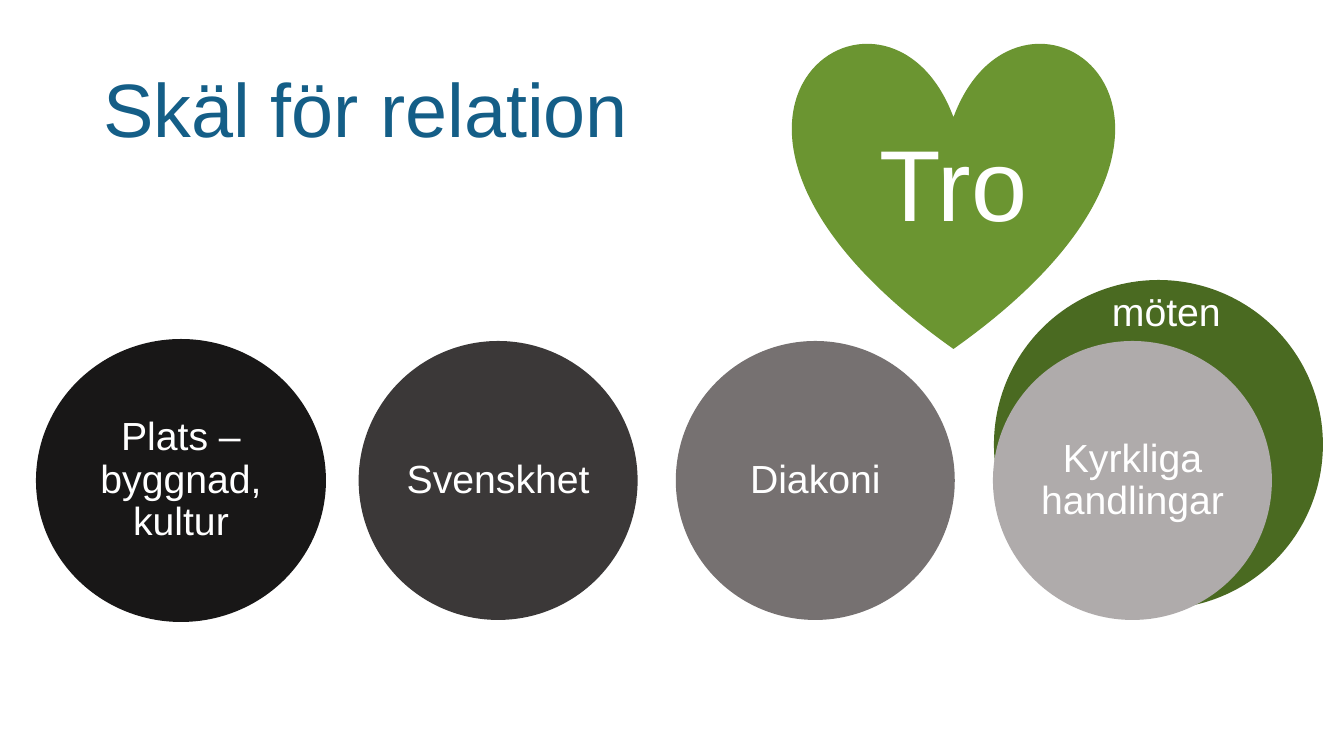
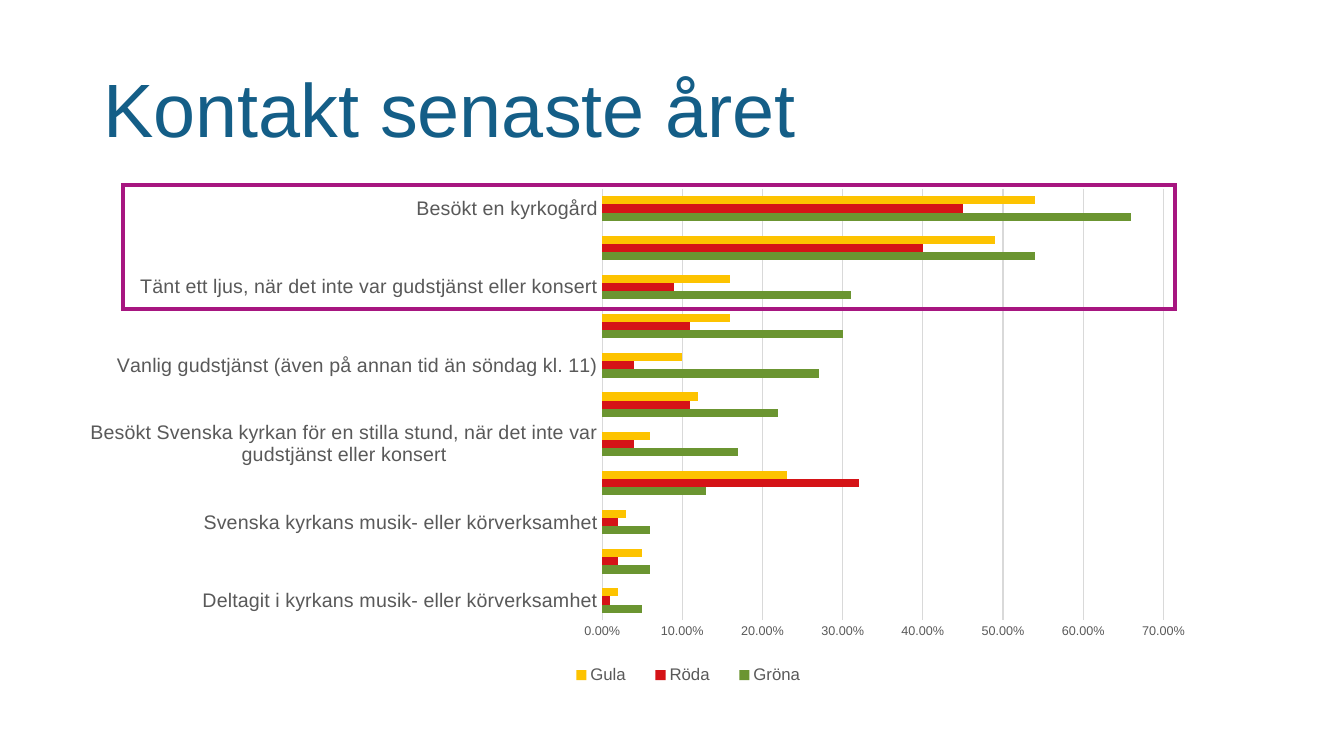
import pptx
import pptx.util
import pptx.chart.data
import pptx.dml.color
import pptx.enum.chart
import pptx.enum.shapes
import pptx.enum.text
import pptx.oxml.ns
import lxml.etree
from dataclasses import dataclass

SHAPE = pptx.enum.shapes.MSO_SHAPE
ALIGN = pptx.enum.text.PP_ALIGN
ANCHOR = pptx.enum.text.MSO_ANCHOR
SLIDE_W, SLIDE_H = 1344, 756
EMU_PER_PX = 12192000 / SLIDE_W


@dataclass(frozen=True)
class Theme:
    font: str = "Arial"
    title: str = "145E87"
    white: str = "FFFFFF"
    axis_text: str = "595959"
    grid: str = "D9D9D9"
    green: str = "6B9531"
    dark_green: str = "4A6A21"
    red: str = "D51317"
    yellow: str = "FDC300"
    highlight: str = "A71680"
    circles: tuple = ("181717", "3B3838", "767171", "AFABAB")
    title_size: int = 54
    heart_size: int = 72
    label_size: int = 28
    category_size: int = 14
    legend_size: int = 12
    tick_size: int = 9


THEME = Theme()


def px(length):
    return pptx.util.Emu(round(length * EMU_PER_PX))


def place(box):
    return [px(length) for length in box]


def color(code):
    return pptx.dml.color.RGBColor.from_string(code)


def style_font(font, size, code):
    font.name = THEME.font
    font.size = pptx.util.Pt(size)
    font.color.rgb = color(code)


def write(frame, text, size, code, align=ALIGN.CENTER, anchor=ANCHOR.MIDDLE, spacing=1.0):
    frame.word_wrap = True
    frame.vertical_anchor = anchor
    para = frame.paragraphs[0]
    para.alignment = align
    para.line_spacing = spacing
    span = para.add_run()
    span.text = text
    style_font(span.font, size, code)


def add_filled(page, kind, box, fill):
    shape = page.shapes.add_shape(kind, *place(box))
    shape.shadow.inherit = False
    shape.fill.solid()
    shape.fill.fore_color.rgb = color(fill)
    shape.line.fill.background()
    return shape


def add_page(deck, title):
    page = deck.slides.add_slide(deck.slide_layouts[5])
    holder = page.shapes.title
    holder.left, holder.top, holder.width, holder.height = place((93, 40, 1159, 146))
    write(holder.text_frame, title, THEME.title_size, THEME.title, ALIGN.LEFT, spacing=0.9)
    return page


def add_circle_row(page, box, labels):
    """Evenly spaced circles; the first is slightly larger."""
    left, top, width, height = box
    small = 279
    first_w, first_h = 290, height
    first_center = left + first_w / 2
    pitch = (left + width - small / 2 - first_center) / (len(labels) - 1)
    for index, (label, fill) in enumerate(zip(labels, THEME.circles)):
        wide, high = (first_w, first_h) if index == 0 else (small, small)
        center = first_center + index * pitch
        circle = add_filled(page, SHAPE.OVAL,
                            (center - wide / 2, top + (height - high) / 2, wide, high), fill)
        frame = circle.text_frame
        frame.margin_left = frame.margin_right = px(4)
        frame.margin_top = frame.margin_bottom = px(4)
        write(frame, label, THEME.label_size, THEME.white, spacing=0.9)


def add_heart(page, box, text):
    heart = add_filled(page, SHAPE.HEART, box, THEME.green)
    write(heart.text_frame, text, THEME.heart_size, THEME.white)


def add_meeting_label(page, box, text):
    label = page.shapes.add_textbox(*place(box))
    write(label.text_frame, text, THEME.label_size, THEME.white, ALIGN.LEFT, ANCHOR.TOP)


def set_layout(owner, position, box, inner=False):
    """Fix a chart part at fractions of the chart."""
    qn = pptx.oxml.ns.qn
    for old in owner.findall(qn("c:layout")):
        owner.remove(old)
    layout = owner.makeelement(qn("c:layout"))
    manual = lxml.etree.SubElement(layout, qn("c:manualLayout"))
    settings = [("layoutTarget", "inner")] if inner else []
    settings += [("xMode", "edge"), ("yMode", "edge"), *zip("xywh", box)]
    for name, value in settings:
        lxml.etree.SubElement(manual, qn("c:" + name)).set("val", str(value))
    owner.insert(position, layout)


def style_axes(chart):
    tick_none = pptx.enum.chart.XL_TICK_MARK.NONE
    categories, values = chart.category_axis, chart.value_axis
    for axis, size in ((categories, THEME.category_size), (values, THEME.tick_size)):
        axis.major_tick_mark = axis.minor_tick_mark = tick_none
        style_font(axis.tick_labels.font, size, THEME.axis_text)
    values.minimum_scale, values.maximum_scale, values.major_unit = 0, 0.7, 0.1
    values.tick_labels.number_format = "0.00%"
    values.tick_labels.number_format_is_linked = False
    values.has_major_gridlines = True
    values.format.line.fill.background()
    for line in (categories.format.line, values.major_gridlines.format.line):
        line.color.rgb = color(THEME.grid)
        line.width = pptx.util.Pt(0.75)


def add_contact_chart(page, box, categories, series):
    data = pptx.chart.data.CategoryChartData(number_format="0.00%")
    data.categories = categories
    for name, _, values in series:
        data.add_series(name, values)
    chart = page.shapes.add_chart(pptx.enum.chart.XL_CHART_TYPE.BAR_CLUSTERED,
                                  *place(box), data).chart
    chart.has_title = False
    style_font(chart.font, THEME.legend_size, THEME.axis_text)
    plot = chart.plots[0]
    plot.gap_width, plot.overlap, plot.vary_by_categories = 182, 0, False
    for bars, (_, fill, _) in zip(plot.series, series):
        bars.format.fill.solid()
        bars.format.fill.fore_color.rgb = color(fill)
        bars.invert_if_negative = False
    style_axes(chart)
    chart.has_legend = True
    legend = chart.legend
    legend.position = pptx.enum.chart.XL_LEGEND_POSITION.BOTTOM
    legend.include_in_layout = False
    style_font(legend.font, THEME.legend_size, THEME.axis_text)
    set_layout(plot._element.getparent(), 0, (0.464, 0.042, 0.495, 0.823), inner=True)
    set_layout(legend._element, 1, (0.42, 0.94, 0.24, 0.06))


def add_highlight(page, box):
    frame = page.shapes.add_shape(SHAPE.RECTANGLE, *place(box))
    frame.shadow.inherit = False
    frame.fill.background()
    frame.line.color.rgb = color(THEME.highlight)
    frame.line.width = pptx.util.Pt(2.25)
    # Square corners
    outline = frame._element.spPr.find(pptx.oxml.ns.qn("a:ln"))
    lxml.etree.SubElement(outline, pptx.oxml.ns.qn("a:miter")).set("lim", "800000")


def build_reasons(deck):
    page = add_page(deck, "Skäl för relation")
    add_filled(page, SHAPE.OVAL, (994, 280, 329, 329), THEME.dark_green)
    add_circle_row(page, (36, 339, 1236, 283),
                   ("Plats – byggnad, kultur", "Svenskhet", "Diakoni", "Kyrkliga handlingar"))
    add_heart(page, (793, 40, 321, 309), "Tro")
    add_meeting_label(page, (1102, 282, 223, 57), "möten")


def build_contacts(deck):
    page = add_page(deck, "Kontakt senaste året")
    # Every second group of bars is labelled, from the bottom up
    labels = (
        "Deltagit i kyrkans musik- eller körverksamhet",
        "Svenska kyrkans musik- eller körverksamhet",
        "Besökt Svenska kyrkan för en stilla stund, när det inte var gudstjänst eller konsert",
        "Vanlig gudstjänst (även på annan tid än söndag kl. 11)",
        "Tänt ett ljus, när det inte var gudstjänst eller konsert",
        "Besökt en kyrkogård",
    )
    categories = [""] * (2 * len(labels) - 1)
    categories[::2] = labels
    series = (
        ("Gröna", THEME.green,
         (0.05, 0.06, 0.06, 0.13, 0.17, 0.22, 0.27, 0.3, 0.31, 0.54, 0.66)),
        ("Röda", THEME.red,
         (0.01, 0.02, 0.02, 0.32, 0.04, 0.11, 0.04, 0.11, 0.09, 0.4, 0.45)),
        ("Gula", THEME.yellow,
         (0.02, 0.05, 0.03, 0.23, 0.06, 0.12, 0.1, 0.16, 0.16, 0.49, 0.54)),
    )
    add_contact_chart(page, (76, 167, 1134, 524), categories, series)
    add_highlight(page, (123, 185, 1052, 124))


def main():
    deck = pptx.Presentation()
    deck.slide_width, deck.slide_height = px(SLIDE_W), px(SLIDE_H)
    build_reasons(deck)
    build_contacts(deck)
    deck.save("out.pptx")


if __name__ == "__main__":
    main()
